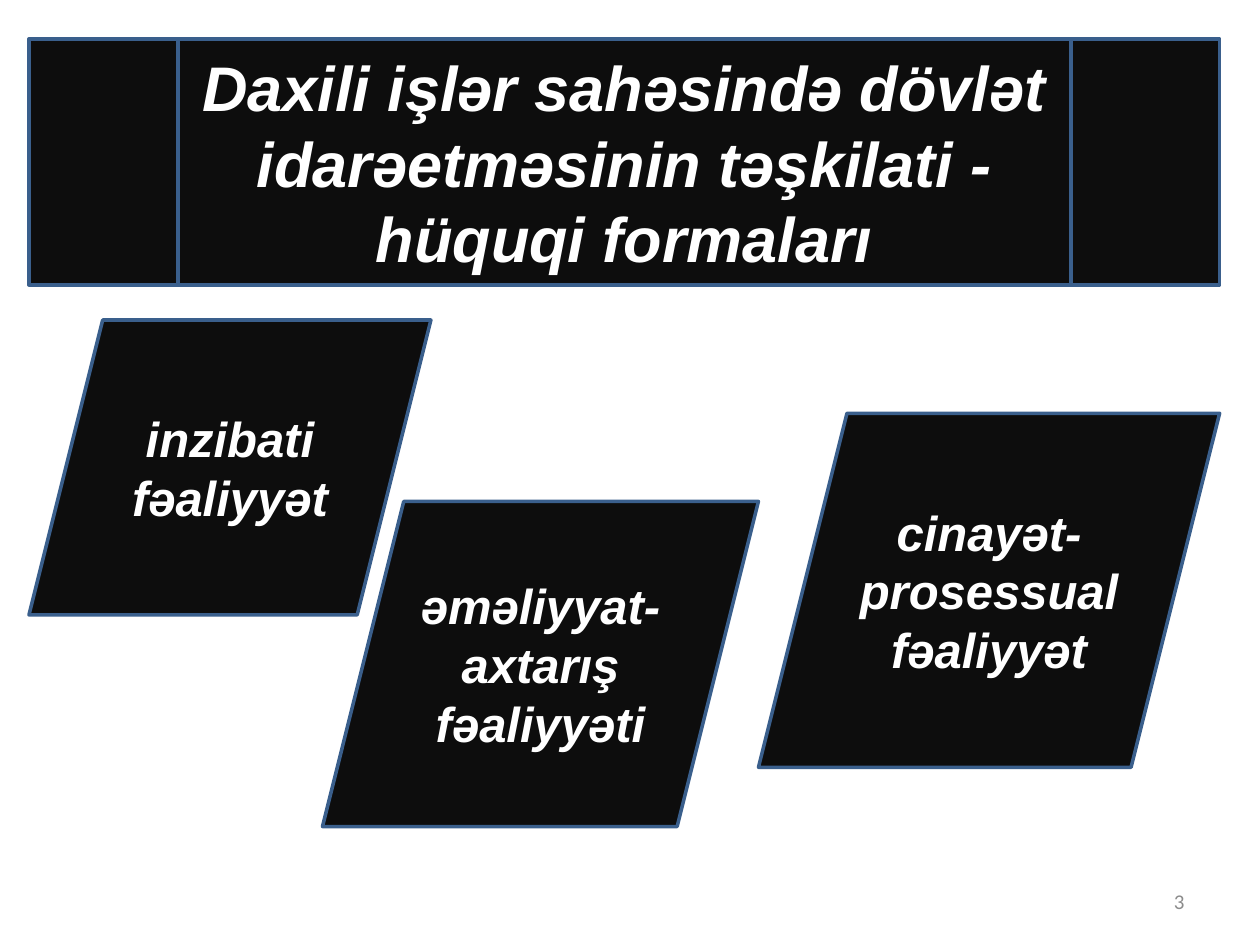
from dataclasses import dataclass

import pptx
import pptx.dml.color
import pptx.enum.shapes
import pptx.enum.text
import pptx.util

Inches = pptx.util.Inches
Shape = pptx.enum.shapes.MSO_SHAPE
Align = pptx.enum.text.PP_ALIGN
COLOURS = {"panel": "0D0D0D", "border": "3A5F8C", "text": "FFFFFF", "number": "8C8C8C"}


@dataclass(frozen=True)
class Panel:
    """A dark panel with its preset outline, place and wording."""
    outline: Shape
    left: float
    top: float
    width: float
    height: float
    text: str
    size: int = 28


PANELS = [
    Panel(Shape.FLOWCHART_PREDEFINED_PROCESS, 0.23, 0.31, 9.45, 1.95,
          "Daxili işlər sahəsində dövlət idarəetməsinin təşkilati - hüquqi formaları", 36),
    Panel(Shape.PARALLELOGRAM, 0.23, 2.54, 3.19, 2.34, "inzibati fəaliyyət"),
    Panel(Shape.PARALLELOGRAM, 2.56, 3.98, 3.46, 2.58, "əməliyyat- axtarış fəaliyyəti"),
    Panel(Shape.PARALLELOGRAM, 6.02, 3.28, 3.66, 2.81, "cinayət-prosessual fəaliyyət"),
]


def colour(name: str) -> pptx.dml.color.RGBColor:
    """Return a named colour."""
    return pptx.dml.color.RGBColor.from_string(COLOURS[name])


def write(box, text: str, size: int, font: str, tint: str, align: Align, strong: bool) -> None:
    """Write one vertically centred paragraph in a box."""
    frame = box.text_frame
    frame.word_wrap = True
    frame.vertical_anchor = pptx.enum.text.MSO_ANCHOR.MIDDLE
    para = frame.paragraphs[0]
    para.alignment = align
    span = para.add_run()
    span.text = text
    span.font.name = font
    span.font.size = pptx.util.Pt(size)
    span.font.bold = span.font.italic = strong
    span.font.color.rgb = colour(tint)


def draw_panel(page, panel: Panel) -> None:
    """Draw a panel with its text."""
    box = page.shapes.add_shape(panel.outline, Inches(panel.left), Inches(panel.top),
                                Inches(panel.width), Inches(panel.height))
    box.shadow.inherit = False
    box.fill.solid()
    box.fill.fore_color.rgb = colour("panel")
    box.line.color.rgb = colour("border")
    box.line.width = pptx.util.Pt(2)
    write(box, panel.text, panel.size, "Arial", "text", Align.CENTER, True)


def main() -> None:
    """Build and save the slide."""
    deck = pptx.Presentation()
    deck.slide_width, deck.slide_height = Inches(10), Inches(7.5)
    page = deck.slides.add_slide(deck.slide_layouts[6])
    number = page.shapes.add_textbox(Inches(7.17), Inches(6.95), Inches(2.33), Inches(0.4))
    write(number, "3", 12, "Calibri", "number", Align.RIGHT, False)
    for panel in PANELS:
        draw_panel(page, panel)
    deck.save("out.pptx")


if __name__ == "__main__":
    main()
